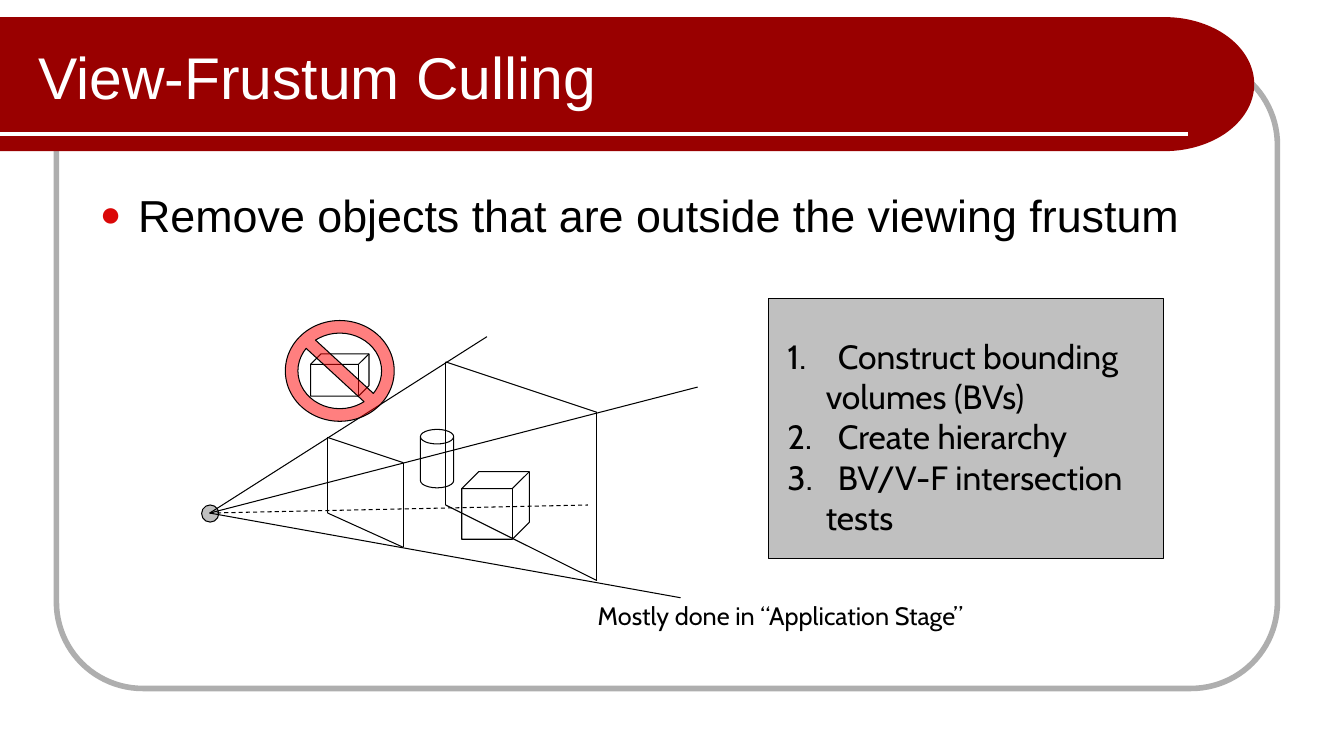
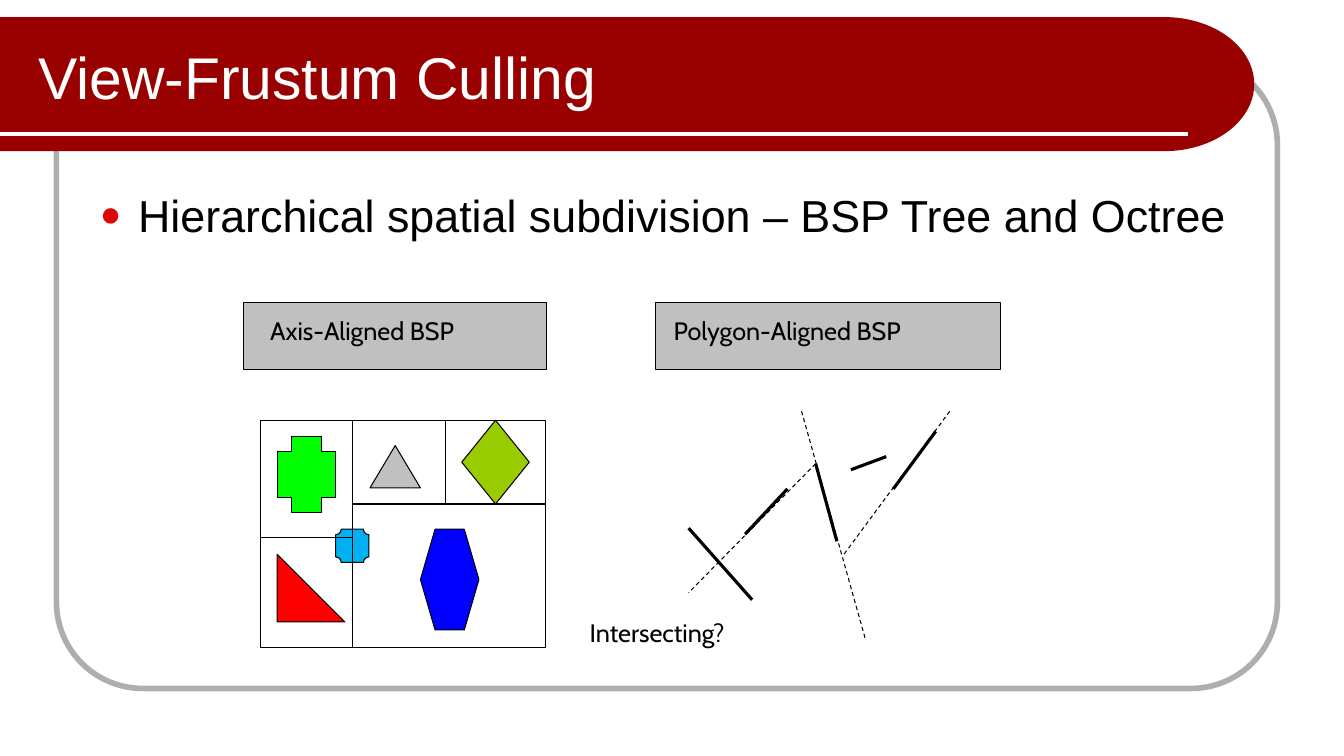
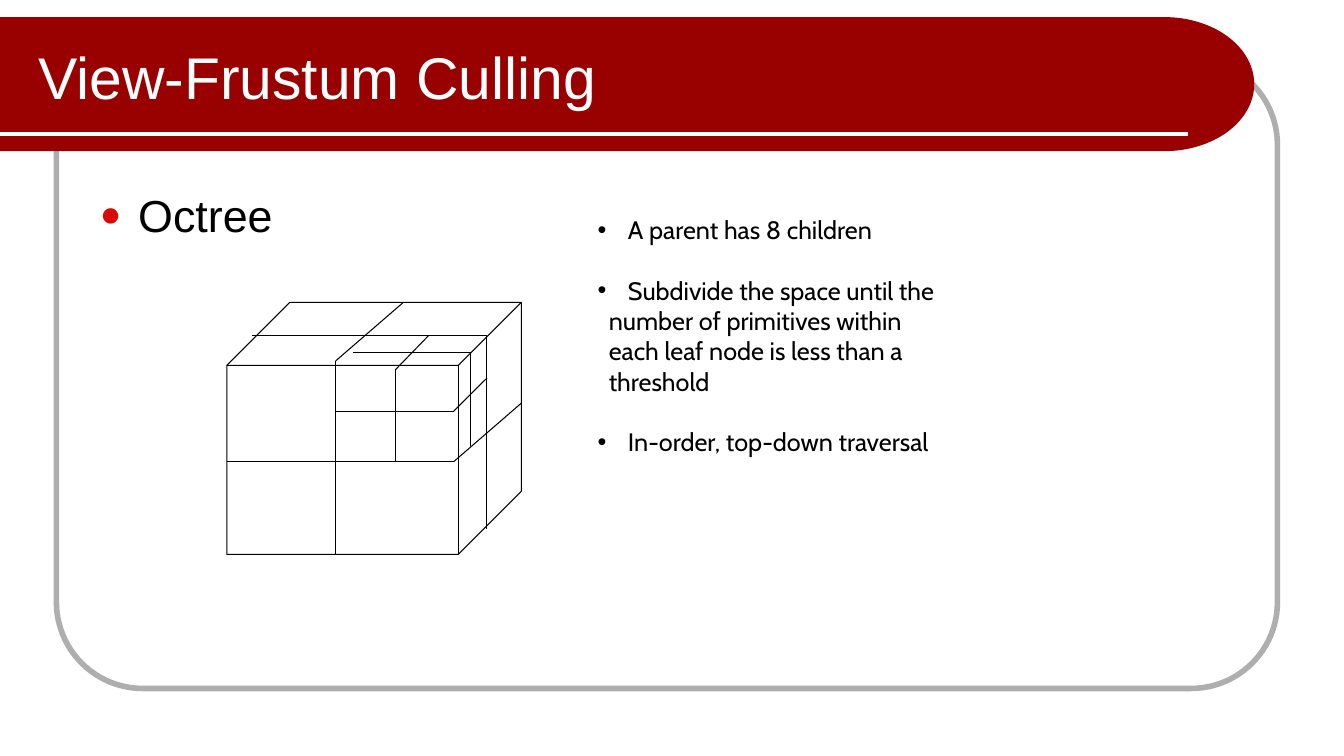
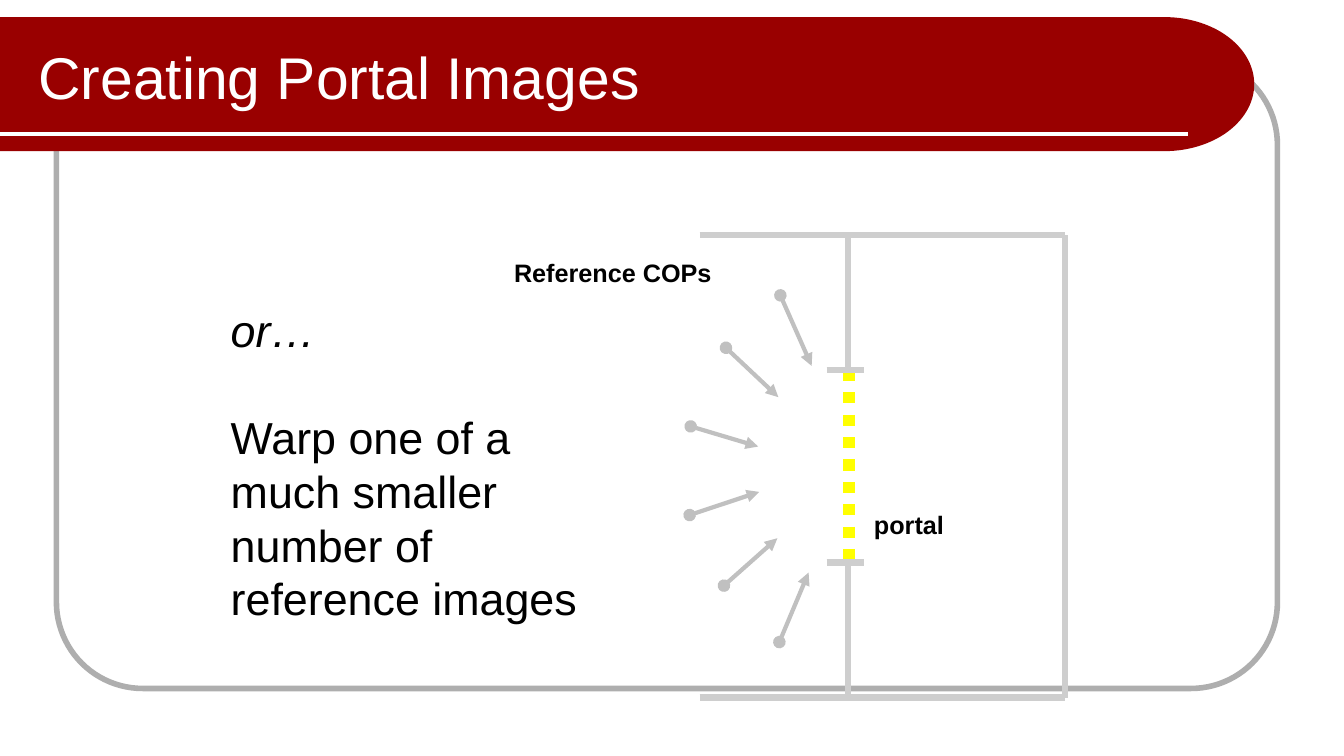
import itertools
import math

import lxml.etree
import pptx
import pptx.dml.color
import pptx.enum.dml
import pptx.enum.shapes
import pptx.enum.text
import pptx.oxml.ns
import pptx.util

SHAPE = pptx.enum.shapes.MSO_SHAPE
DASH = pptx.enum.dml.MSO_LINE
ANCHOR = pptx.enum.text.MSO_ANCHOR
Inches = pptx.util.Inches
Pt = pptx.util.Pt

COLOURS = {
    "band": "990000", "frame": "AEAEAE", "white": "FFFFFF", "ink": "000000",
    "bullet": "DA0808", "panel": "C0C0C0", "wall": "CECECE", "portal": "FFFF00",
    "red": "FF0000", "green": "00FF00", "lime": "99CC00", "blue": "0000FF", "sky": "00B0F0",
}
WIDTH, HEIGHT = 13.33, 7.5
HEADING, DIAGRAM = "Arial", "Cabin"

# Content: paragraphs are (text, options of write)
CULLING = "View-Frustum Culling"
HANG = {"left": 0.5, "hang": 0.5}
STEPS = [
    ("Construct bounding", {"number": 1, **HANG}),
    ("volumes (BVs)", {"left": 0.38}),
    ("Create hierarchy", {"number": 2, **HANG}),
    ("BV/V-F intersection", {"number": 2, **HANG}),
    ("tests", {"left": 0.38}),
]
POINT = {"bullet": "•", "left": 0.3, "hang": 0.3}
OCTREE_POINTS = [
    ("A parent has 8 children", POINT),
    ("Subdivide the space until the", {"before": 21.6, **POINT}),
    ("number of primitives within", {"left": 0.11}),
    ("each leaf node is less than a", {"left": 0.11}),
    ("threshold", {"left": 0.11}),
    ("In-order, top-down traversal", {"before": 21.6, **POINT}),
]
WARP = [("or…", {"italic": True}),
        ("Warp one of a much smaller number of reference images", {"before": 38.4})]

# Drawings: chains of points in inches
EYE = (2.08, 5.09)
NEAR_PLANE = [(3.25, 4.34), (4, 4.59), (4, 5.43), (3.25, 5.09)]
FAR_PLANE = [(4.42, 3.59), (5.92, 4.09), (5.92, 5.76), (4.42, 5.01)]
FRUSTUM = [plane + plane[:1] for plane in (NEAR_PLANE, FAR_PLANE)] + [
    [EYE, end] for end in ((4.83, 3.34), (6.92, 3.84), (6.75, 5.93))]

CELL_WALLS = [[(3.5, 4.17), (3.5, 6.42)], [(3.5, 5), (5.42, 5)],
              [(2.58, 5.33), (3.5, 5.33)], [(4.42, 4.17), (4.42, 5)]]
CELL_OBJECTS = [
    (SHAPE.ISOSCELES_TRIANGLE, (3.67, 4.42, 0.5, 0.42), "panel"),
    (SHAPE.HEXAGON, (4.17, 5.25, 0.58, 1), "blue"),
    (SHAPE.RIGHT_TRIANGLE, (2.75, 5.5, 0.67, 0.67), "red"),
    (SHAPE.CROSS, (2.75, 4.33, 0.58, 0.75), "green"),
    (SHAPE.DIAMOND, (4.58, 4.17, 0.67, 0.83), "lime"),
]
POLYGONS = [[(6.83, 5.24), (7.46, 5.95)], [(7.39, 5.3), (7.81, 4.85)],
            [(8.09, 4.6), (8.3, 5.37)], [(8.44, 4.66), (8.79, 4.53)],
            [(9.28, 4.28), (8.86, 4.85)]]
SPLITTERS = [[(7.95, 4.08), (8.58, 6.33)], [(8.09, 4.6), (6.83, 5.88)],
             [(9.42, 4.08), (8.37, 5.5)]]

OCTREE_EDGES = [
    [(4, 3), (3.33, 3.58), (3.33, 5.5)],
    [(2.25, 4.58), (4.5, 4.58), (5.17, 4)],
    [(2.5, 3.33), (4.83, 3.33), (4.83, 5.25)],
    [(4.25, 3.33), (3.92, 3.67), (3.92, 4.58)],
    [(3.33, 4.08), (4.5, 4.08), (4.83, 3.75)],
    [(3.5, 3.5), (4.67, 3.5), (4.67, 4.42)],
]

CAMERAS = [[(7.74, 2.93), (8.05, 3.63)], [(7.2, 3.45), (7.72, 3.94)],
           [(6.85, 4.23), (7.52, 4.43)], [(6.84, 5.11), (7.53, 4.88)],
           [(7.18, 5.81), (7.71, 5.34)], [(7.73, 6.37), (8.02, 5.68)]]
ROOM_LEFT, ROOM_RIGHT, ROOM_TOP, ROOM_BOTTOM = 6.94, 10.56, 2.33, 6.92
PORTAL_X, PORTAL_TOP, PORTAL_BOTTOM = 8.41, 3.67, 5.58
ROOM = [
    [(ROOM_LEFT, ROOM_BOTTOM), (ROOM_RIGHT, ROOM_BOTTOM)],
    [(ROOM_LEFT, ROOM_TOP), (ROOM_RIGHT, ROOM_TOP)],
    [(ROOM_RIGHT, ROOM_BOTTOM), (ROOM_RIGHT, ROOM_TOP)],
    [(PORTAL_X, ROOM_TOP), (PORTAL_X, PORTAL_TOP)],
    [(PORTAL_X, PORTAL_BOTTOM), (PORTAL_X, ROOM_BOTTOM)],
]
JAMBS = [[(8.2, y), (8.57, y)] for y in (PORTAL_TOP, PORTAL_BOTTOM)]


def colour(name):
    return pptx.dml.color.RGBColor.from_string(COLOURS[name])


def add_xml(parent, tag, **attributes):
    return lxml.etree.SubElement(parent, pptx.oxml.ns.qn(tag), attributes)


def write(frame, paragraphs, size=18, font=DIAGRAM, ink="ink", bold=None):
    """Fill a text frame with (text, options) paragraphs."""
    for index, (text, options) in enumerate(paragraphs):
        para = frame.paragraphs[0] if index == 0 else frame.add_paragraph()
        para.text = text
        para.alignment = pptx.enum.text.PP_ALIGN.LEFT
        para.space_before = Pt(options.get("before", 0))
        properties = para._p.get_or_add_pPr()
        left, hang = options.get("left", 0), options.get("hang", 0)
        properties.set("marL", str(Inches(left)))
        properties.set("indent", str(-Inches(hang)))
        if "bullet_colour" in options:
            add_xml(add_xml(properties, "a:buClr"), "a:srgbClr", val=COLOURS[options["bullet_colour"]])
            add_xml(properties, "a:buSzPct", val="80000")
        if "number" in options:
            add_xml(properties, "a:buFontTx")
            add_xml(properties, "a:buAutoNum", type="arabicPeriod", startAt=str(options["number"]))
        elif "bullet" in options:
            add_xml(properties, "a:buFont", typeface="Arial")
            add_xml(properties, "a:buChar", char=options["bullet"])
        else:
            add_xml(properties, "a:buNone")
        para.font.name, para.font.size = font, Pt(size)
        para.font.bold, para.font.italic = bold, options.get("italic")
        para.font.color.rgb = colour(ink)


def place(shape, box):
    shape.left, shape.top, shape.width, shape.height = map(Inches, box)


def style(shape, fill=None, line="ink", weight=0.75):
    shape.shadow.inherit = False
    if fill:
        shape.fill.solid()
        shape.fill.fore_color.rgb = colour(fill)
    else:
        shape.fill.background()
    if line:
        shape.line.color.rgb = colour(line)
        shape.line.width = Pt(weight)
    else:
        shape.line.fill.background()
    return shape


def add_figure(page, kind, box, fill=None, line="ink", weight=0.75):
    return style(page.shapes.add_shape(kind, *map(Inches, box)), fill, line, weight)


def add_panel(page, box, paragraphs, left, top, size):
    """Grey box whose text starts left and top inches inside it."""
    frame = add_figure(page, SHAPE.RECTANGLE, box, "panel").text_frame
    frame.vertical_anchor = ANCHOR.TOP
    frame.margin_left, frame.margin_top, frame.margin_right = Inches(left), Inches(top), 0
    write(frame, paragraphs, size)


def add_text(page, box, paragraphs, wrap=False, **font):
    frame = page.shapes.add_textbox(*map(Inches, box)).text_frame
    frame.word_wrap = wrap
    frame.auto_size = pptx.enum.text.MSO_AUTO_SIZE.SHAPE_TO_FIT_TEXT
    write(frame, paragraphs, **font)


def draw_chains(page, chains, ink="ink", weight=0.75, dash=None, arrow=False):
    """Join the points of each chain with straight connectors; return the last one."""
    for start, end in itertools.chain.from_iterable(map(itertools.pairwise, chains)):
        line = page.shapes.add_connector(
            pptx.enum.shapes.MSO_CONNECTOR.STRAIGHT, *map(Inches, start + end))
        line.line.color.rgb = colour(ink)
        line.line.width = Pt(weight)
        if dash:
            line.line.dash_style = dash
        if arrow:
            outline = line.line._get_or_add_ln()
            add_xml(outline, "a:headEnd", type="oval")
            add_xml(outline, "a:tailEnd", type="triangle")
        add_xml(line._element.spPr, "a:effectLst")
    return line


def build_master(deck, page):
    """Put the frame, band and rule behind the master's placeholders.

    Masters have no shape builder, so the parts are made on page and moved.
    """
    master = deck.slide_master
    for holder in master.placeholders:
        if holder.placeholder_format.type == pptx.enum.shapes.PP_PLACEHOLDER.TITLE:
            place(holder, (0.28, 0.25, 10.38, 1))
        elif holder.placeholder_format.type == pptx.enum.shapes.PP_PLACEHOLDER.BODY:
            place(holder, (0.89, 1.81, 11.56, 4.77))
    frame = add_figure(page, SHAPE.ROUNDED_RECTANGLE, (0.56, 0.58, 12.11, 6.25), None, "frame", 4)
    frame.adjustments[0] = 0.137
    top, bottom, bend, tip = 0.17, 1.5, 11.55, 12.44
    middle, radius = (top + bottom) / 2, (bottom - top) / 2
    angles = [math.radians(degrees) for degrees in range(-90, 91, 3)]
    arc = [(bend + (tip - bend) * math.cos(a), middle + radius * math.sin(a)) for a in angles]
    builder = page.shapes.build_freeform(0, Inches(top))
    builder.add_line_segments([tuple(map(Inches, point)) for point in arc + [(0, bottom)]])
    band = style(builder.convert_to_shape(), "band", None)
    rule = draw_chains(page, [[(0, 1.33), (11.78, 1.33)]], "white", 3)
    for position, part in enumerate((frame, band, rule), start=2):
        master.shapes.element.insert(position, part._element)


def add_page(deck, title, point=None):
    """Add a titled page, with one bulleted point if given."""
    page = deck.slides.add_slide(deck.slide_layouts[1 if point else 5])
    page.shapes.title.text_frame.vertical_anchor = ANCHOR.MIDDLE
    write(page.shapes.title.text_frame, [(title, {})], 42, HEADING, "white")
    if point:
        options = {"bullet": "●", "bullet_colour": "bullet", "left": 0.38, "hang": 0.38}
        write(page.placeholders[1].text_frame, [(point, options)], 32, HEADING)
    return page


def build_frustum(deck):
    page = add_page(deck, CULLING, "Remove objects that are outside the viewing frustum")
    add_figure(page, SHAPE.OVAL, (2, 5.01, 0.17, 0.17), "panel")
    draw_chains(page, FRUSTUM)
    draw_chains(page, [[EYE, (5.83, 5.01)]], dash=DASH.DASH)
    add_figure(page, SHAPE.CUBE, (4.58, 4.68, 0.67, 0.67))
    add_figure(page, SHAPE.CAN, (4.17, 4.26, 0.33, 0.58)).adjustments[0] = 0.438
    add_panel(page, (7.62, 2.96, 3.92, 2.58), STEPS, 0.19, 0.37, 24)
    add_figure(page, SHAPE.CUBE, (3.08, 3.51, 0.58, 0.42))
    ban = add_figure(page, SHAPE.NO_SYMBOL, (2.83, 3.18, 1.08, 1), "red")
    ban.adjustments[0] = 0.125
    add_xml(ban._element.spPr.find(".//" + pptx.oxml.ns.qn("a:srgbClr")), "a:alpha", val="50000")
    add_text(page, (5.83, 5.91, 4.02, 0.4), [("Mostly done in “Application Stage”", {})])
    return page


def build_subdivision(deck):
    page = add_page(deck, CULLING, "Hierarchical spatial subdivision – BSP Tree and Octree")
    add_panel(page, (2.42, 3, 3, 0.67), [("Axis-Aligned BSP", {})], 0.26, 0.13, 18)
    add_panel(page, (6.5, 3, 3.42, 0.67), [("Polygon-Aligned BSP", {})], 0.18, 0.13, 18)
    add_figure(page, SHAPE.PLAQUE, (3.33, 5.25, 0.33, 0.33), "sky")
    add_figure(page, SHAPE.RECTANGLE, (2.58, 4.17, 2.83, 2.25))
    draw_chains(page, CELL_WALLS)
    for kind, box, fill in CELL_OBJECTS:
        add_figure(page, kind, box, fill)
    draw_chains(page, POLYGONS, weight=2.25)
    draw_chains(page, SPLITTERS, dash=DASH.DASH)
    add_text(page, (5.75, 6.08, 1.65, 0.4), [("Intersecting?", {})])


def build_octree(deck):
    page = add_page(deck, CULLING, "Octree")
    add_figure(page, SHAPE.CUBE, (2.25, 3, 2.92, 2.5))
    draw_chains(page, OCTREE_EDGES)
    add_text(page, (5.83, 2.08, 3.62, 2.52), OCTREE_POINTS)


def build_portals(deck):
    page = add_page(deck, "Creating Portal Images")
    draw_chains(page, CAMERAS, "panel", 3, arrow=True)
    draw_chains(page, ROOM, "wall", 4.5)
    draw_chains(page, [[(8.42, PORTAL_TOP), (8.42, PORTAL_BOTTOM)]], "portal", 8, DASH.ROUND_DOT)
    draw_chains(page, JAMBS, "wall", 4.5)
    add_text(page, (8.57, 5, 0.9, 0.4), [("portal", {})], font=HEADING, bold=True)
    add_text(page, (5, 2.5, 2.18, 0.4), [("Reference COPs", {})], font=HEADING, bold=True)
    add_text(page, (2.19, 2.95, 3.7, 3.33), WARP, wrap=True, size=32, font=HEADING)


def main():
    deck = pptx.Presentation()
    deck.slide_width, deck.slide_height = Inches(WIDTH), Inches(HEIGHT)
    build_master(deck, build_frustum(deck))
    build_subdivision(deck)
    build_octree(deck)
    build_portals(deck)
    deck.save("out.pptx")


if __name__ == "__main__":
    main()
